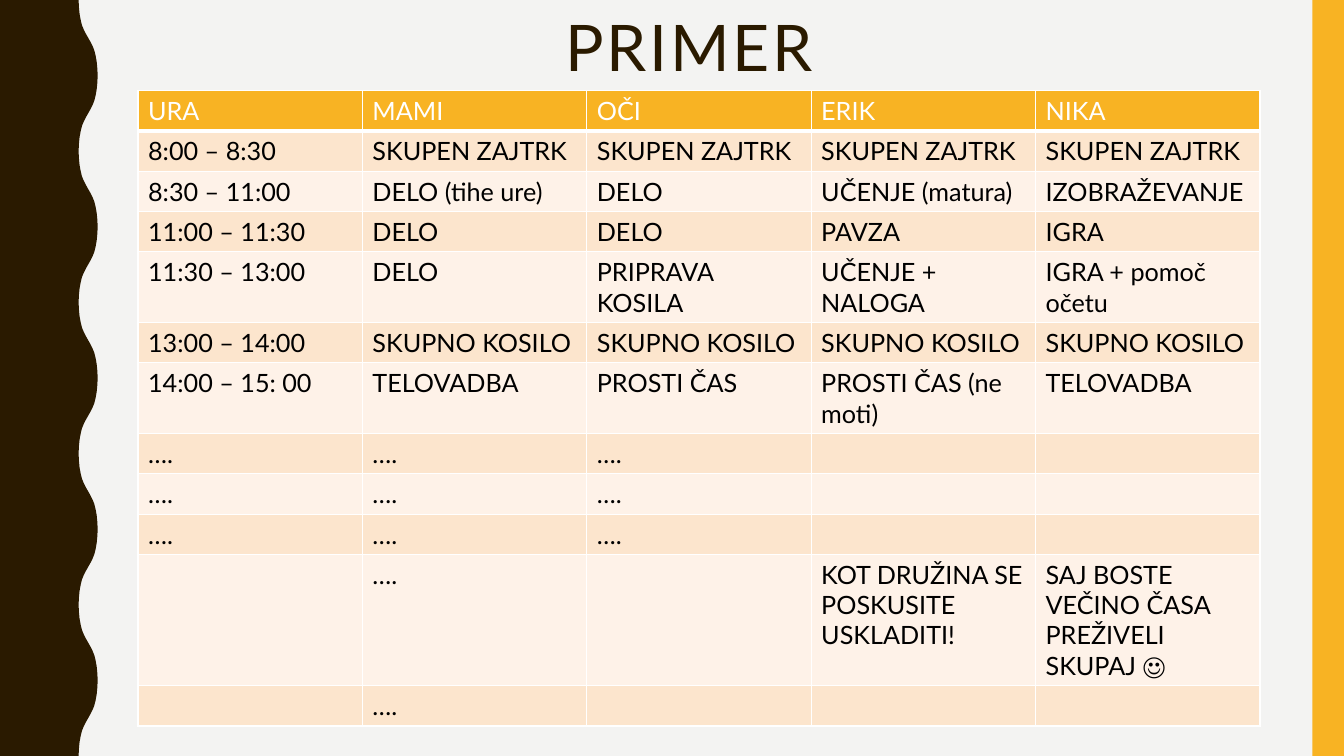
import pptx
import pptx.dml.color
import pptx.enum.shapes
import pptx.enum.text
import pptx.oxml.ns
import pptx.util
from lxml import etree

Pt = pptx.util.Pt
qn = pptx.oxml.ns.qn

FONT = "Lato"
COLOURS = {"paper": "F3F3F2", "brown": "2A1A00", "gold": "F8B323", "white": "FFFFFF",
           "black": "000000", "dark band": "FCE5CD", "light band": "FEF2E8"}
PAGE_WIDTH, PAGE_HEIGHT = 960, 540
TEXT_SIZE, LINE_HEIGHT, CELL_PADDING = 18, 21.6, 7.2

# Right edge of the wave over one half period: (down, across) in points
HALF_PERIOD = 54
WAVE_RISE = [(0, 56.2), (5, 56.4), (10, 56.9), (14.4, 57.7), (18, 58.6), (21, 59.8),
             (24, 61.3), (27, 63), (30, 64.7), (33, 66.2), (36, 67.4), (39.6, 68.3),
             (44, 69.1), (49, 69.6), (54, 69.8)]

# Each row: the number of text lines it holds, then its cells
SCHEDULE = [
    (1, ["URA", "MAMI", "OČI", "ERIK", "NIKA"]),
    (1, ["8:00 – 8:30"] + ["SKUPEN ZAJTRK"] * 4),
    (1, ["8:30 – 11:00", "DELO (tihe ure)", "DELO", "UČENJE (matura)", "IZOBRAŽEVANJE"]),
    (1, ["11:00 – 11:30", "DELO", "DELO", "PAVZA", "IGRA"]),
    (2, ["11:30 – 13:00", "DELO", "PRIPRAVA KOSILA", "UČENJE + NALOGA",
         "IGRA + pomoč očetu"]),
    (1, ["13:00 – 14:00"] + ["SKUPNO KOSILO"] * 4),
    (2, ["14:00 – 15: 00", "TELOVADBA", "PROSTI ČAS", "PROSTI ČAS (ne moti)", "TELOVADBA"]),
    *[(1, ["….", "….", "….", "", ""])] * 3,
    (4, ["", "….", "", "KOT DRUŽINA SE POSKUSITE USKLADITI!",
         "SAJ BOSTE VEČINO ČASA PREŽIVELI SKUPAJ ☺"]),
    (1, ["", "….", "", "", ""]),
]


def colour(name):
    return pptx.dml.color.RGBColor.from_string(COLOURS[name])


def paint(shape, name):
    shape.shadow.inherit = False
    shape.fill.solid()
    shape.fill.fore_color.rgb = colour(name)
    shape.line.fill.background()


def add_span(para, text, size, name):
    span = para.add_run()
    span.text = text
    span.font.name = FONT
    span.font.size = Pt(size)
    span.font.color.rgb = colour(name)
    return span


def add_wave(page, left, top, height):
    edge = []
    for half in range(round(height / HALF_PERIOD)):
        rise = WAVE_RISE if half % 2 == 0 else [
            (HALF_PERIOD - down, across) for down, across in reversed(WAVE_RISE)]
        edge += [(left + across, top + half * HALF_PERIOD + down) for down, across in rise]
    builder = page.shapes.build_freeform(Pt(left), Pt(top), scale=1.0)
    outline = edge + [(left, top + height)]
    builder.add_line_segments([(Pt(across), Pt(down)) for across, down in outline], close=True)
    paint(builder.convert_to_shape(), "brown")


def add_side_bar(page, left, top, width, height):
    bar = page.shapes.add_shape(pptx.enum.shapes.MSO_SHAPE.RECTANGLE,
                                Pt(left), Pt(top), Pt(width), Pt(height))
    paint(bar, "gold")


def fill_title(page, left, top, width, height):
    title = page.shapes.title
    title.left, title.top, title.width, title.height = map(Pt, (left, top, width, height))
    frame = title.text_frame
    frame.word_wrap = True
    frame.auto_size = pptx.enum.text.MSO_AUTO_SIZE.NONE
    frame.vertical_anchor = pptx.enum.text.MSO_ANCHOR.MIDDLE
    para = frame.paragraphs[0]
    para.alignment = pptx.enum.text.PP_ALIGN.CENTER
    para.line_spacing = 0.9
    span = add_span(para, "PRIMER ", 45.9, "brown")
    span.font._element.set("spc", "200")


def set_borders(cell, widths):
    """Draw white borders; widths maps each side (L, R, T, B) to points."""
    properties = cell._tc.get_or_add_tcPr()
    for side, width in widths.items():
        line = etree.SubElement(properties, qn(f"a:ln{side}"), w=str(Pt(width)))
        fill = etree.SubElement(line, qn("a:solidFill"))
        etree.SubElement(fill, qn("a:srgbClr"), val=COLOURS["white"])


def fill_cell(cell, text, row):
    set_borders(cell, {"L": 1, "R": 1, "T": 3 if row == 1 else 1, "B": 3 if row == 0 else 1})
    band = "gold" if row == 0 else "dark band" if row % 2 else "light band"
    cell.fill.solid()
    cell.fill.fore_color.rgb = colour(band)
    para = cell.text_frame.paragraphs[0]
    if text:
        add_span(para, text, TEXT_SIZE, "black" if row else "white")
    else:
        ending = etree.SubElement(para._p, qn("a:endParaRPr"), sz=str(TEXT_SIZE * 100))
        etree.SubElement(ending, qn("a:latin"), typeface=FONT)


def add_schedule(page, left, top, width):
    heights = [lines * LINE_HEIGHT + CELL_PADDING for lines, _ in SCHEDULE]
    column_count = len(SCHEDULE[0][1])
    table = page.shapes.add_table(len(SCHEDULE), column_count, Pt(left), Pt(top),
                                  Pt(width), Pt(sum(heights))).table
    for column in table.columns:
        column.width = Pt(width / column_count)
    for row, (_, texts) in enumerate(SCHEDULE):
        table.rows[row].height = Pt(heights[row])
        for column, text in enumerate(texts):
            fill_cell(table.cell(row, column), text, row)


def main():
    deck = pptx.Presentation()
    deck.slide_width, deck.slide_height = Pt(PAGE_WIDTH), Pt(PAGE_HEIGHT)
    page = deck.slides.add_slide(deck.slide_layouts.get_by_name("Title Only"))
    page.background.fill.solid()
    page.background.fill.fore_color.rgb = colour("paper")
    add_wave(page, 0, 0, PAGE_HEIGHT)
    add_side_bar(page, 937.5, 0, 22.5, PAGE_HEIGHT)
    fill_title(page, 98.6, 8.6, 801.4, 55.4)
    add_schedule(page, 98.6, 64.6, 801.4)
    deck.save("out.pptx")


if __name__ == "__main__":
    main()
